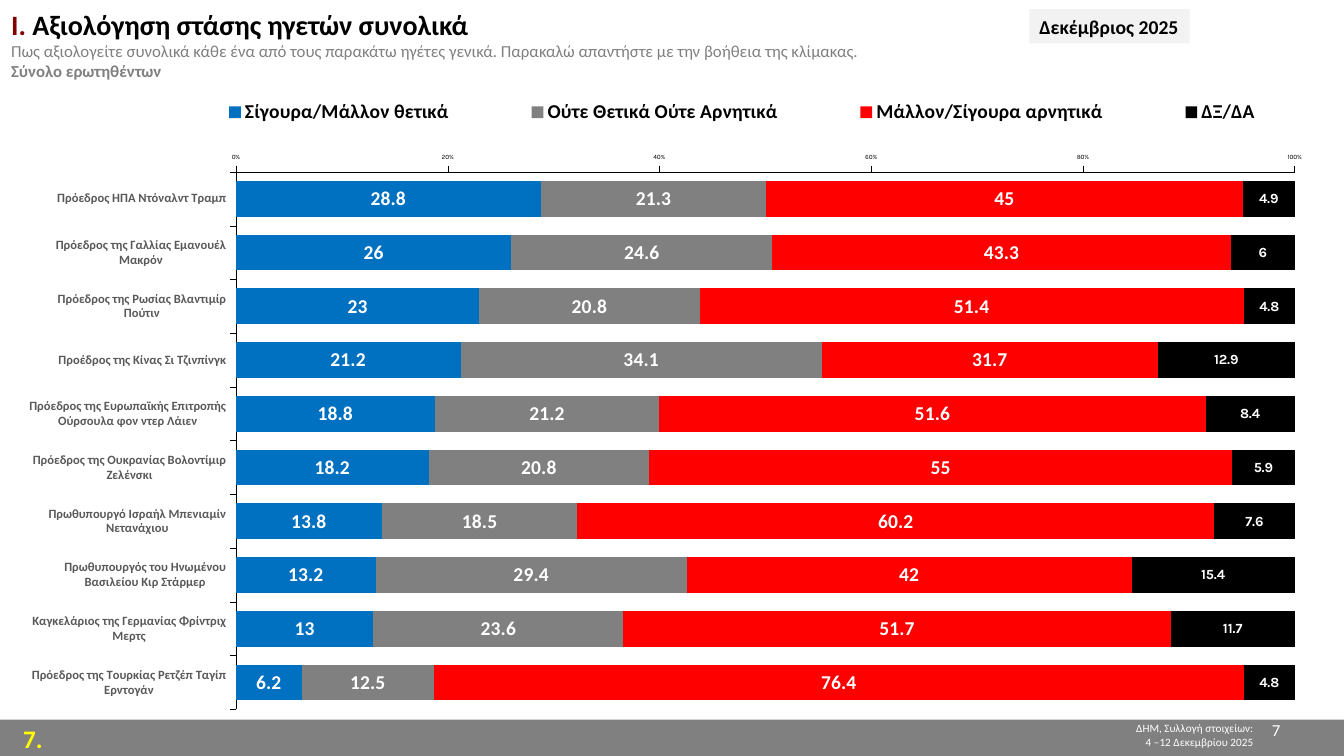
from lxml import etree
from pptx import Presentation
from pptx.chart.data import CategoryChartData
from pptx.dml.color import RGBColor
from pptx.enum.chart import XL_CHART_TYPE as ChartType, XL_LEGEND_POSITION as LegendPosition
from pptx.enum.chart import XL_TICK_LABEL_POSITION as LabelPosition, XL_TICK_MARK as TickMark
from pptx.enum.shapes import MSO_SHAPE as Shape
from pptx.enum.text import MSO_ANCHOR as Anchor, MSO_AUTO_SIZE as AutoSize, PP_ALIGN as Align
from pptx.oxml.ns import qn
from pptx.util import Inches, Pt

WIDTH, HEIGHT = 13.33, 7.5
BLACK, WHITE, GREY = "000000", "FFFFFF", "808080"

LEADERS = [
    ("Πρόεδρος ΗΠΑ Ντόναλντ Τραμπ", 28.8, 21.3, 45, 4.9),
    ("Πρόεδρος της Γαλλίας Εμανουέλ Μακρόν", 26, 24.6, 43.3, 6),
    ("Πρόεδρος της Ρωσίας Βλαντιμίρ Πούτιν", 23, 20.8, 51.4, 4.8),
    ("Προέδρος της Κίνας Σι Τζινπίνγκ", 21.2, 34.1, 31.7, 12.9),
    ("Πρόεδρος της Ευρωπαϊκής Επιτροπής Ούρσουλα φον ντερ Λάιεν", 18.8, 21.2, 51.6, 8.4),
    ("Πρόεδρος της Ουκρανίας Βολοντίμιρ Ζελένσκι", 18.2, 20.8, 55, 5.9),
    ("Πρωθυπουργό Ισραήλ Μπενιαμίν Νετανάχιου", 13.8, 18.5, 60.2, 7.6),
    ("Πρωθυπουργός του Ηνωμένου Βασιλείου Κιρ Στάρμερ", 13.2, 29.4, 42, 15.4),
    ("Καγκελάριος της Γερμανίας Φρίντριχ Μερτς", 13, 23.6, 51.7, 11.7),
    ("Πρόεδρος της Τουρκίας Ρετζέπ Ταγίπ Ερντογάν", 6.2, 12.5, 76.4, 4.8),
]
# name, bar colour, label size, label font
ANSWERS = [
    ("Σίγουρα/Μάλλον θετικά", "0070C0", 14, "Calibri"),
    ("Ούτε Θετικά Ούτε Αρνητικά", GREY, 14, "Calibri"),
    ("Μάλλον/Σίγουρα αρνητικά", "FF0000", 14, "Calibri"),
    ("ΔΞ/ΔΑ", BLACK, 10, "Karla"),
]


def rgb(value):
    return RGBColor.from_string(value)


def style(font, size, color, bold=False, name="Calibri"):
    font.size, font.bold, font.name = Pt(size), bold, name
    font.color.rgb = rgb(color)


def inches(box):
    return [Inches(length) for length in box]


def add_panel(slide, box, color):
    panel = slide.shapes.add_shape(Shape.RECTANGLE, *inches(box))
    panel.shadow.inherit = False
    panel.fill.solid()
    panel.fill.fore_color.rgb = rgb(color)
    panel.line.fill.background()
    return panel


def add_text(slide, box, text, size, color, bold=False, align=Align.LEFT):
    frame = slide.shapes.add_textbox(*inches(box)).text_frame
    frame.word_wrap = True
    frame.text = text
    for paragraph in frame.paragraphs:
        paragraph.alignment = align
        style(paragraph.font, size, color, bold)


def add_footer(slide, box):
    left, top, width, height = box
    add_panel(slide, box, GREY)
    add_text(slide, (left + 0.72 * width, top - 0.03, 0.22 * width, height),
             "ΔΗΜ, Συλλογή στοιχείων:\n4 –12 Δεκεμβρίου 2025", 8, WHITE, align=Align.RIGHT)
    add_text(slide, (left + 0.13, top - 0.01, 0.05 * width, height), "7.", 18, "FFFF00", bold=True)
    add_text(slide, (left + 0.75 * width, top - 0.05, 0.21 * width, height),
             "7", 12, WHITE, align=Align.RIGHT)


def set_title(slide, box):
    title = slide.shapes.title
    title.left, title.top, title.width, title.height = inches(box)
    frame = title.text_frame
    frame.auto_size, frame.vertical_anchor = AutoSize.NONE, Anchor.TOP
    frame.word_wrap = True
    paragraph = frame.paragraphs[0]
    paragraph.alignment = Align.LEFT
    lines = [
        [("Ι. ", 20, "800000", True), ("Αξιολόγηση στάσης ηγετών συνολικά", 20, BLACK, True)],
        [("Πως αξιολογείτε συνολικά κάθε ένα από τους παρακάτω ηγέτες γενικά. "
          "Παρακαλώ απαντήστε με την βοήθεια της κλίμακας.", 12, GREY, False)],
        [("Σύνολο ερωτηθέντων", 12, GREY, True)],
    ]
    for number, line in enumerate(lines):
        if number:
            paragraph.add_line_break()
        for text, size, color, bold in line:
            run = paragraph.add_run()
            run.text = text
            style(run.font, size, color, bold)


def add_date(slide, box):
    frame = add_panel(slide, box, "F2F2F2").text_frame
    frame.word_wrap = False
    frame.text = "Δεκέμβριος 2025"
    style(frame.paragraphs[0].font, 14, BLACK, bold=True)


def place(parent, x, y, width, height, inner=False):
    """Give a plot area or legend a fixed place, in shares of the chart."""
    for old in parent.findall(qn("c:layout")):
        parent.remove(old)
    layout = etree.Element(qn("c:layout"))
    manual = etree.SubElement(layout, qn("c:manualLayout"))
    settings = [("layoutTarget", "inner")] if inner else []
    settings += [("xMode", "edge"), ("yMode", "edge"), ("x", x), ("y", y), ("w", width), ("h", height)]
    for tag, value in settings:
        etree.SubElement(manual, qn(f"c:{tag}")).set("val", str(value))
    parent.insert(1 if parent.tag == qn("c:legend") else 0, layout)


def format_axes(chart):
    categories, values = chart.category_axis, chart.value_axis
    for axis in (categories, values):
        axis.major_tick_mark, axis.minor_tick_mark = TickMark.OUTSIDE, TickMark.NONE
        axis.has_major_gridlines = False
        axis.tick_label_position = LabelPosition.NEXT_TO_AXIS
        axis.format.line.color.rgb = rgb(BLACK)
        axis.format.line.width = Pt(0.15)
    categories.reverse_order = True
    style(categories.tick_labels.font, 9, "595959", bold=True)
    values.minimum_scale, values.maximum_scale, values.major_unit = 0, 1, 0.2
    values.tick_labels.number_format = "0%"
    values.tick_labels.number_format_is_linked = False
    style(values.tick_labels.font, 4.7, BLACK, name="Karla")


def add_ratings_chart(slide, box):
    data = CategoryChartData()
    names, *columns = zip(*LEADERS)
    data.categories = names
    for answer, column in zip(ANSWERS, columns):
        data.add_series(answer[0], column)
    chart = slide.shapes.add_chart(ChartType.BAR_STACKED_100, *inches(box), data).chart
    chart.has_title = False
    style(chart.font, 8, BLACK, bold=True, name="Karla")
    format_axes(chart)

    plot = chart.plots[0]
    plot.gap_width, plot.overlap, plot.vary_by_categories = 50, 100, False
    for series, (_, color, size, font_name) in zip(plot.series, ANSWERS):
        series.format.fill.solid()
        series.format.fill.fore_color.rgb = rgb(color)
        labels = series.data_labels
        labels.show_value = True
        style(labels.font, size, WHITE, bold=True, name=font_name)

    chart.has_legend = True
    legend = chart.legend
    legend.position, legend.include_in_layout = LegendPosition.RIGHT, False
    style(legend.font, 14, BLACK, bold=True)
    place(legend._element, 0.09, 0.03, 0.91, 0.075)
    plot_area = chart._chartSpace.find(f"{qn('c:chart')}/{qn('c:plotArea')}")
    place(plot_area, 0.154, 0.16, 0.818, 0.832, inner=True)


def main():
    presentation = Presentation()
    presentation.slide_width, presentation.slide_height = Inches(WIDTH), Inches(HEIGHT)
    slide = presentation.slides.add_slide(presentation.slide_layouts[5])
    set_title(slide, (0.01, 0.02, 10.91, 1.25))
    add_ratings_chart(slide, (0.29, 0.68, 12.91, 6.41))
    add_footer(slide, (0, 7.14, WIDTH, HEIGHT - 7.14))
    add_date(slide, (10.21, 0.09, 1.59, 0.34))
    presentation.save("out.pptx")


if __name__ == "__main__":
    main()
